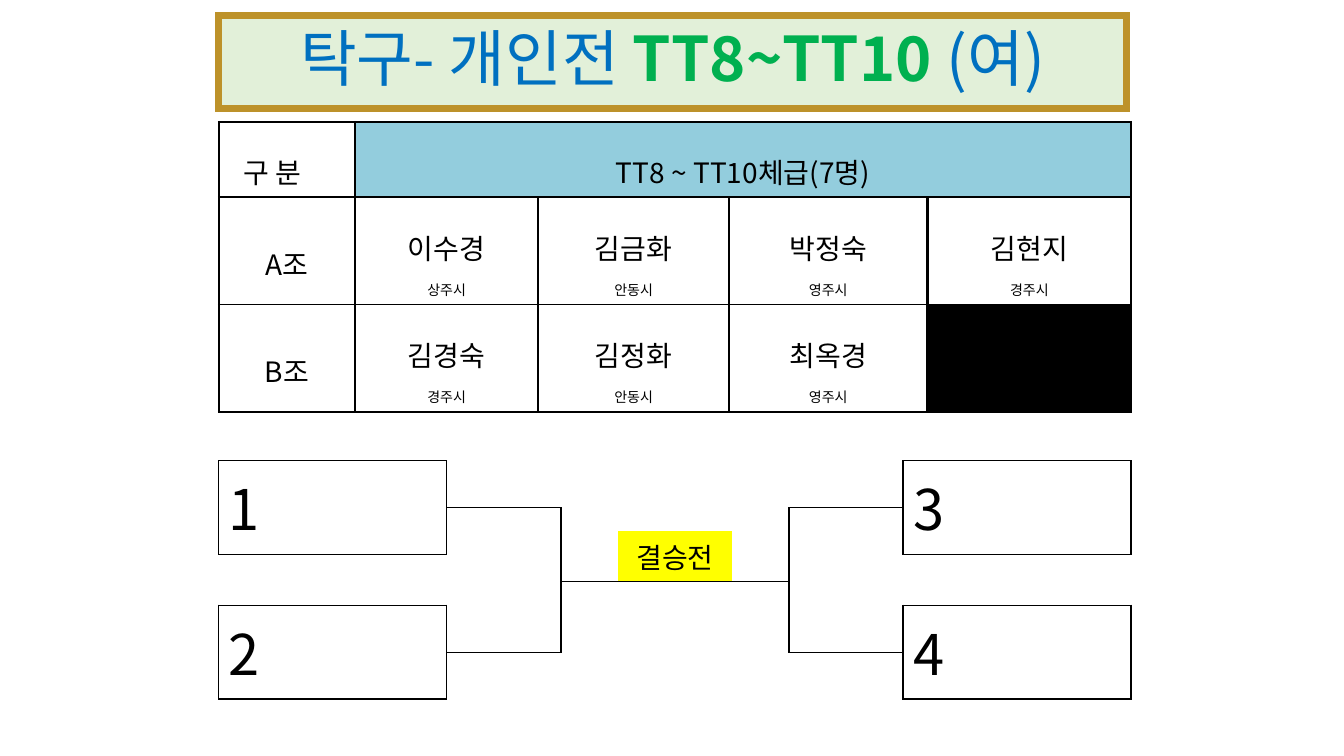
import pptx
import pptx.util
import pptx.dml.color
import pptx.enum.shapes
import pptx.enum.text
import pptx.oxml.ns
from lxml import etree

W, H = 13.33, 7.5
FONT = "Noto Sans CJK KR"
NO_STYLE = "{2D5ABB26-0587-4C30-8999-92F81FD0307C}"
COLORS = {
    "black": "000000", "blue": "0070C0", "green": "00B050", "mint": "E2F0D9",
    "gold": "BD922A", "sky": "93CDDD", "yellow": "FFFF00",
}
GROUPS = [
    ("A조", [("이수경", "상주시"), ("김금화", "안동시"), ("박정숙", "영주시"), ("김현지", "경주시")]),
    ("B조", [("김경숙", "경주시"), ("김정화", "안동시"), ("최옥경", "영주시")]),
]
SIDES = ["lnL", "lnR", "lnT", "lnB"]
CENTER = pptx.enum.text.PP_ALIGN.CENTER
MIDDLE = pptx.enum.text.MSO_ANCHOR.MIDDLE
qn = pptx.oxml.ns.qn
Inches, Pt = pptx.util.Inches, pptx.util.Pt


def rgb(name):
    return pptx.dml.color.RGBColor.from_string(COLORS[name])


def fill(target, name):
    target.fill.solid()
    target.fill.fore_color.rgb = rgb(name)


def style(font, size, color="black", bold=False):
    font.name, font.size, font.bold = FONT, Pt(size), bold
    font.color.rgb = rgb(color)
    etree.SubElement(font._rPr, qn("a:ea"), typeface=FONT)


def write(cell, lines, align=None, spacing=None):
    """Write (text, size) lines, one paragraph each."""
    tf = cell.text_frame
    for i, (text, size) in enumerate(lines):
        p = tf.paragraphs[0] if i == 0 else tf.add_paragraph()
        p.text, p.alignment, p.line_spacing = text, align, spacing
        style(p.font, size)


def edge(cell, side, width):
    """Rule one side of a cell; width 0 leaves it without a line."""
    tcPr = cell._tc.get_or_add_tcPr()
    for old in tcPr.findall(qn("a:" + side)):
        tcPr.remove(old)
    earlier = SIDES[:SIDES.index(side)]
    ln = etree.Element(qn("a:" + side), w=str(int(Pt(width))))
    if width:
        solid = etree.SubElement(ln, qn("a:solidFill"))
        etree.SubElement(solid, qn("a:srgbClr"), val=COLORS["black"])
    else:
        etree.SubElement(ln, qn("a:noFill"))
    tcPr.insert(sum(tcPr.find(qn("a:" + s)) is not None for s in earlier), ln)


def hline(table, y, cols, width):
    """Rule the boundary above row y, on the cells at both sides of it."""
    for c in cols:
        if y > 0:
            edge(table.cell(y - 1, c), "lnB", width)
        if y < len(table.rows):
            edge(table.cell(y, c), "lnT", width)


def vline(table, x, rows, width):
    """Rule the boundary left of column x, on the cells at both sides of it."""
    for r in rows:
        if x > 0:
            edge(table.cell(r, x - 1), "lnR", width)
        if x < len(table.columns):
            edge(table.cell(r, x), "lnL", width)


def merge(table, r, c, rows, cols):
    cell = table.cell(r, c)
    cell.merge(table.cell(r + rows - 1, c + cols - 1))
    return cell


def new_table(s, box, widths, heights):
    """Add a plain table whose columns and rows are given as relative shares."""
    x, y, w, h = box
    table = s.shapes.add_table(len(heights), len(widths), *map(Inches, box)).table
    table.first_row = table.horz_banding = False
    table._tbl.tblPr.find(qn("a:tableStyleId")).text = NO_STYLE
    for col, share in zip(table.columns, widths):
        col.width = Inches(w * share / sum(widths))
    for row, share in zip(table.rows, heights):
        row.height = Inches(h * share / sum(heights))
    for cell in table.iter_cells():
        cell.fill.background()
        for side in SIDES:
            edge(cell, side, 0)
    return table


def add_title(s, box):
    sp = s.shapes.add_shape(pptx.enum.shapes.MSO_SHAPE.RECTANGLE, *map(Inches, box))
    sp.shadow.inherit = False
    fill(sp, "mint")
    sp.line.color.rgb, sp.line.width = rgb("gold"), Pt(5)
    # Square corners
    etree.SubElement(sp.line._get_or_add_ln(), qn("a:miter"), lim="800000")
    tf = sp.text_frame
    tf.word_wrap, tf.vertical_anchor = True, MIDDLE
    p = tf.paragraphs[0]
    p.alignment, p.line_spacing = CENTER, 0.9
    for text, color, bold in [("탁구- 개인전 ", "blue", False),
                              ("TT8~TT10 ", "green", True), ("(여)", "blue", False)]:
        r = p.add_run()
        r.text = text
        style(r.font, 44, color, bold)


def add_groups(s, box):
    table = new_table(s, box, [1.35, 1.82, 1.89, 1.97, 2.02], [0.63, 0.66, 0.66])
    # Header row
    header = merge(table, 0, 1, 1, 4)
    fill(header, "sky")
    write(table.cell(0, 0), [("구 분　", 20)], CENTER, 1.6)
    write(header, [("TT8 ~ TT10체급(7명)", 20)], CENTER, 1.6)
    # Players of each group
    for r, (group, players) in enumerate(GROUPS, 1):
        write(table.cell(r, 0), [(group, 20)], CENTER, 1.6)
        for c, (player, city) in enumerate(players, 1):
            write(table.cell(r, c), [(player, 20), (city, 10)], CENTER, 1.6)
    fill(table.cell(2, 4), "black")
    for cell in table.iter_cells():
        cell.vertical_anchor = MIDDLE
    # Rules
    for y, width in enumerate([1.7, 1.7, 0.56, 1.7]):
        hline(table, y, range(5), width)
    for x in range(6):
        vline(table, x, range(3) if x in (0, 1, 5) else range(1, 3), 1.7)
    edge(header, "lnR", 1.7)


def add_bracket(s, box):
    table = new_table(s, box, [2, 2, 2, 1, 1, 1, 1, 2, 2, 2], [1] * 12)
    # Small type keeps the empty rows low
    for cell in table.iter_cells():
        cell.margin_top = cell.margin_bottom = 0
        etree.SubElement(cell.text_frame.paragraphs[0]._p, qn("a:endParaRPr"), sz="600")
    for r in range(12):
        if r not in (4, 5):
            for c in (3, 5):
                merge(table, r, c, 1, 2)
    # Numbered places
    for i, (c, r) in enumerate([(0, 1), (0, 7), (8, 1), (8, 7)], 1):
        place = merge(table, r, c, 4, 2)
        place.margin_top = place.margin_bottom = Inches(0.05)
        write(place, [(str(i), 40)])
        for y in (r, r + 4):
            hline(table, y, range(c, c + 2), 1)
        for x in (c, c + 2):
            vline(table, x, range(r, r + 4), 1)
        for side in SIDES:
            edge(place, side, 1)
    # Final
    final = merge(table, 4, 4, 2, 2)
    final.margin_top = final.margin_bottom = Inches(0.05)
    fill(final, "yellow")
    write(final, [("결승전", 20)], CENTER)
    # Joining lines
    for y in (3, 9):
        hline(table, y, (2, 7), 1)
    for x in (3, 7):
        vline(table, x, range(3, 9), 1)
    hline(table, 6, range(3, 7), 1)
    # Merged cells carry their outer rules on their first cell
    edge(final, "lnB", 1)
    for r in (3, 6, 7, 8):
        edge(table.cell(r, 5), "lnR", 1)


def main():
    prs = pptx.Presentation()
    prs.slide_width, prs.slide_height = Inches(W), Inches(H)
    s = prs.slides.add_slide(prs.slide_layouts[6])
    left, width = 2.17, 9.05
    add_title(s, (left, 0.02 * H, 9, 0.93))
    add_groups(s, (left, 1.21, width, 0.26 * H))
    add_bracket(s, (left, 4.34, width, 2.79))
    prs.save("out.pptx")


if __name__ == "__main__":
    main()
